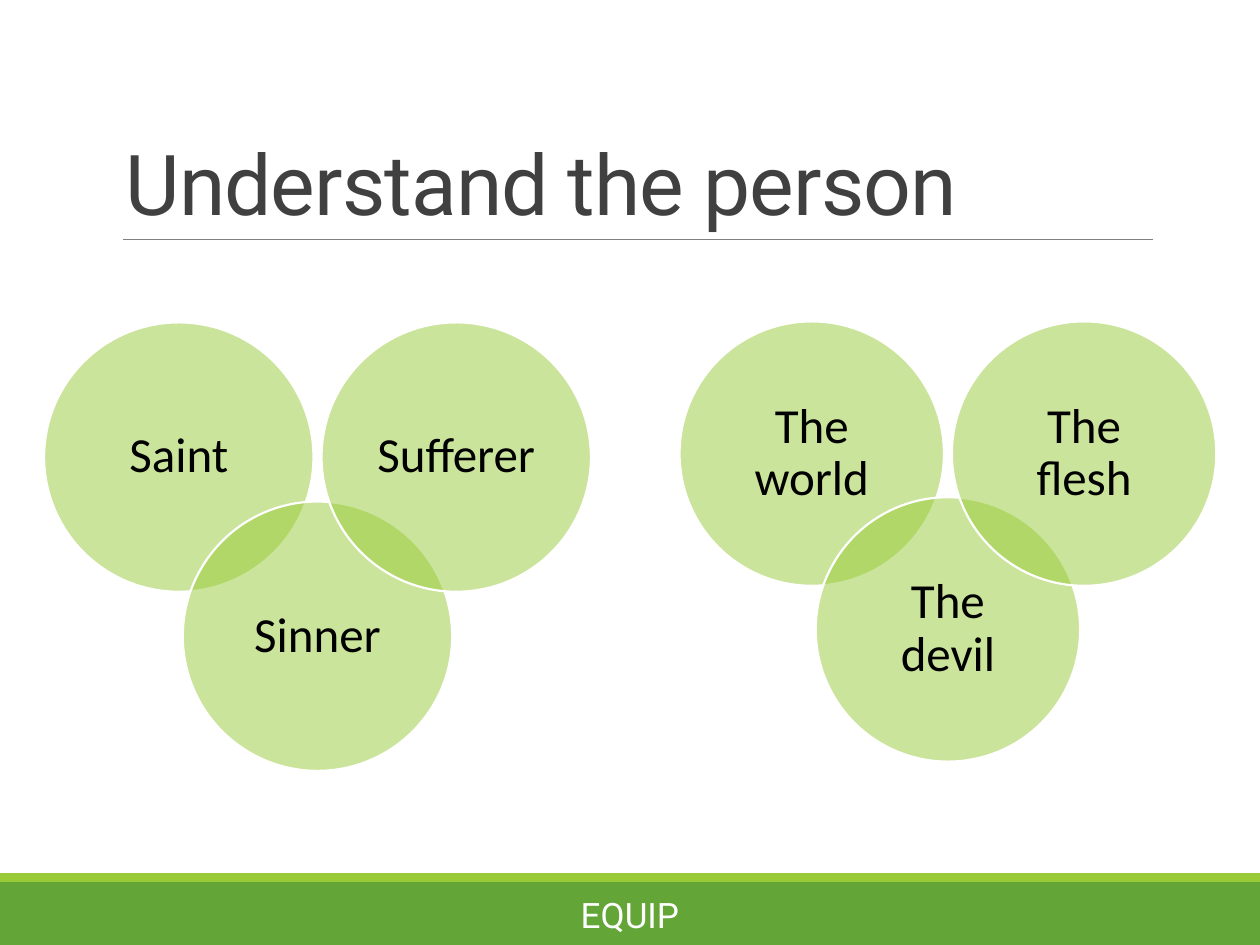
from lxml import etree
from pptx import Presentation
from pptx.dml.color import RGBColor
from pptx.enum.shapes import MSO_CONNECTOR, MSO_SHAPE
from pptx.enum.text import MSO_ANCHOR, PP_ALIGN
from pptx.oxml.ns import qn
from pptx.util import Cm, Pt

RECT, OVAL = MSO_SHAPE.RECTANGLE, MSO_SHAPE.OVAL
STRAIGHT = MSO_CONNECTOR.STRAIGHT
MIDDLE, BOTTOM = MSO_ANCHOR.MIDDLE, MSO_ANCHOR.BOTTOM
LEFT, CENTER = PP_ALIGN.LEFT, PP_ALIGN.CENTER
COLORS = {
    "band": "63A537", "accent": "99CB38", "rule": "808080",
    "title": "404040", "label": "000000", "white": "FFFFFF",
}
TITLE = {"name": "Roboto", "size": Pt(48)}
FOOTER = {"name": "Roboto", "size": Pt(20)}
LABEL = {"name": "Calibri", "size": Pt(28)}
STEP, DROP = 0.515, 0.665


def rgb(key):
    return RGBColor.from_string(COLORS[key])


def add_filled(shapes, kind, box, color):
    sp = shapes.add_shape(kind, *map(Cm, box))
    sp.shadow.inherit = False
    sp.fill.solid()
    sp.fill.fore_color.rgb = rgb(color)
    sp.line.fill.background()
    return sp


def set_text(sp, text, font, color, align, anchor, spacing=1.0, insets=(0.25, 0.13)):
    tf = sp.text_frame
    x, y = map(Cm, insets)
    frame = {
        "word_wrap": True, "vertical_anchor": anchor,
        "margin_left": x, "margin_right": x,
        "margin_top": y, "margin_bottom": y,
    }
    p = tf.paragraphs[0]
    r = p.add_run()
    r.text = text
    r.font.color.rgb = rgb(color)
    formats = (
        (tf, frame),
        (p, {"alignment": align, "line_spacing": spacing}),
        (r.font, font),
    )
    for target, values in formats:
        for name, value in values.items():
            setattr(target, name, value)
    return r


def add_title(slide, box, text):
    x, y, w, h = box
    rule = slide.shapes.add_connector(
        STRAIGHT, Cm(x + 0.2), Cm(y + h), Cm(x + w), Cm(y + h))
    rule.line.color.rgb = rgb("rule")
    rule.line.width = Pt(0.5)
    etree.SubElement(rule._element.spPr, qn("a:effectLst"))
    sp = slide.shapes.add_textbox(*map(Cm, box))
    r = set_text(sp, text, TITLE, "title", LEFT, BOTTOM, 0.85)
    r.font._element.set("spc", "-50")


def add_footer(slide, box, text):
    x, y, w, h = box
    strip = 0.18
    add_filled(slide.shapes, RECT, (x, y + strip, w, h - strip), "band")
    add_filled(slide.shapes, RECT, (x, y, w, strip), "accent")
    label_w = 10.06
    sp = slide.shapes.add_textbox(
        Cm(x + (w - label_w) / 2), Cm(y + 0.33), Cm(label_w), Cm(1.02))
    set_text(sp, text, FOOTER, "white", CENTER, MIDDLE)


def add_venn(slide, x, y, size, labels):
    group = slide.shapes.add_group_shape()
    for i, label in enumerate(labels):
        box = (x + i * STEP * size, y + i % 2 * DROP * size, size, size)
        sp = add_filled(group.shapes, OVAL, box, "accent")
        color = sp._element.spPr.find(qn("a:solidFill"))[0]
        etree.SubElement(color, qn("a:alpha"), val="50000")
        sp.line.color.rgb = rgb("white")
        sp.line.width = Pt(1.25)
        set_text(sp, label, LABEL, "label", CENTER, MIDDLE, 0.9, (0.3, 0.3))


def main():
    prs = Presentation()
    prs.slide_width, prs.slide_height = Cm(25.4), Cm(19.05)
    slide = prs.slides.add_slide(prs.slide_layouts[6])
    add_footer(slide, (0, 17.6, 25.4, 1.45), "EQUIP")
    add_title(slide, (2.28, 0.79, 20.96, 4.04), "Understand the person")
    add_venn(slide, 0.89, 6.5, 5.43, ("Saint", "Sinner", "Sufferer"))
    add_venn(slide, 13.7, 6.48, 5.33, ("The world", "The devil", "The flesh"))
    prs.save("out.pptx")


if __name__ == "__main__":
    main()
